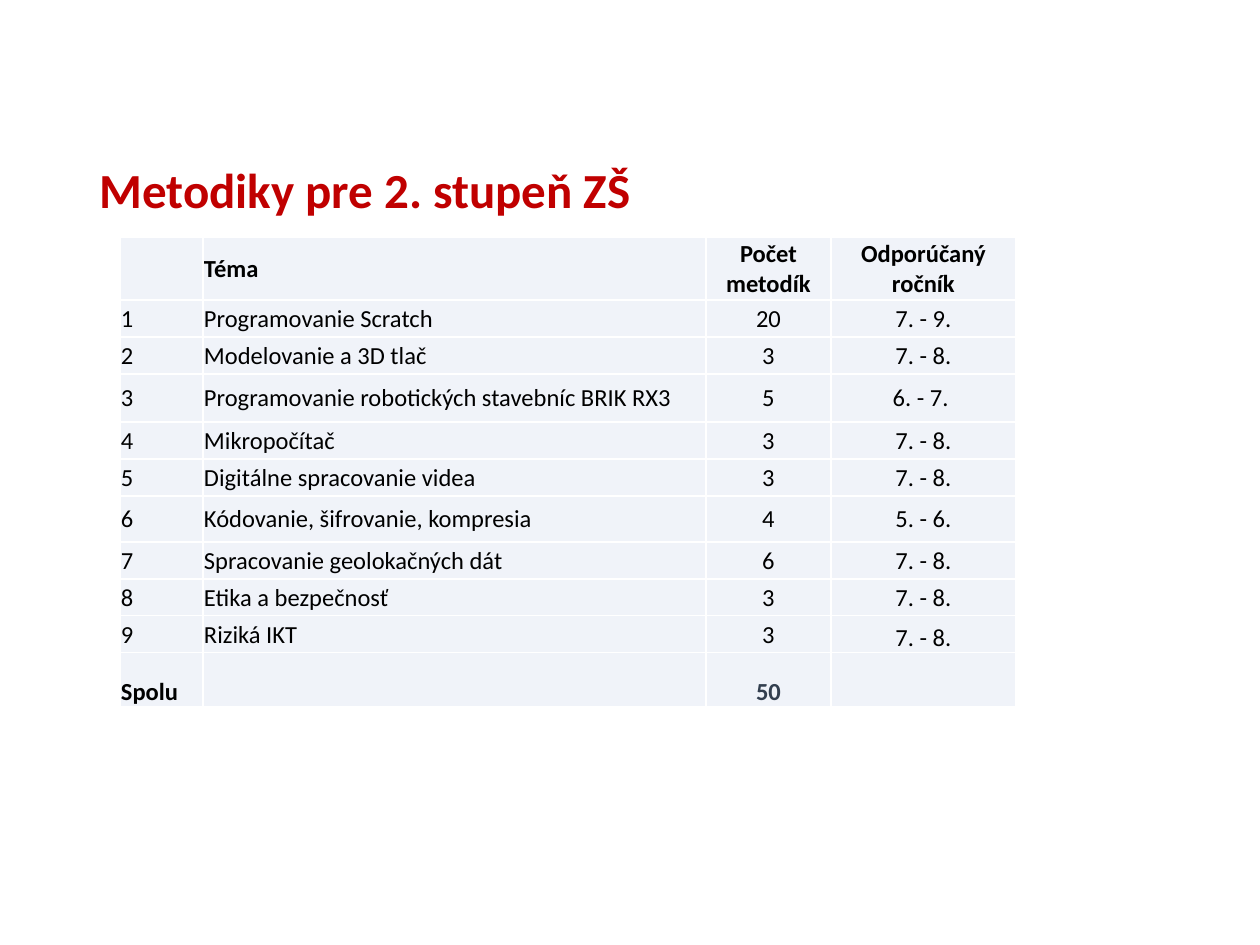
"""Build the slide listing teaching methodologies for lower secondary school."""
import dataclasses

import lxml.etree
import pptx
import pptx.dml.color
import pptx.enum.text
import pptx.oxml.ns
import pptx.util

PX_PER_INCH = 126
FONT = "Calibri"
COLORS = {"title": "C00000", "text": "000000", "total": "333F4F",
          "cell": "EAEFF7", "border": "FFFFFF"}
CELL_OPACITY = 70
ANCHOR = pptx.enum.text.MSO_ANCHOR
ALIGN = pptx.enum.text.PP_ALIGN
COLUMN_WIDTHS = (83, 503, 125, 185)
COLUMN_ALIGNS = (ALIGN.LEFT, ALIGN.LEFT, ALIGN.CENTER, ALIGN.CENTER)
HEADER_HEIGHT, TOPIC_HEIGHT, TOTAL_HEIGHT = 63, 37, 54


@dataclasses.dataclass(frozen=True)
class Topic:
    name: str
    count: str
    grades: str
    height: int = TOPIC_HEIGHT


@dataclasses.dataclass(frozen=True)
class Entry:
    text: str
    bold: bool = False
    color: str = "text"
    anchor: ANCHOR = ANCHOR.MIDDLE


TOPICS = (
    Topic("Programovanie Scratch", "20", "7. - 9."),
    Topic("Modelovanie a 3D tlač", "3", "7. - 8."),
    Topic("Programovanie robotických stavebníc BRIK RX3", "5", "6. - 7. ", 48),
    Topic("Mikropočítač", "3", "7. - 8."),
    Topic("Digitálne spracovanie videa", "3", "7. - 8."),
    Topic("Kódovanie, šifrovanie, kompresia", "4", "5. - 6.", 46),
    Topic("Spracovanie geolokačných dát", "6", "7. - 8."),
    Topic("Etika a bezpečnosť", "3", "7. - 8."),
    Topic("Riziká IKT", "3", "7. - 8."),
)


def px(length: int) -> pptx.util.Emu:
    return pptx.util.Emu(round(length * 914400 / PX_PER_INCH))


def rgb(name: str) -> pptx.dml.color.RGBColor:
    return pptx.dml.color.RGBColor.from_string(COLORS[name])


def add_span(para, text: str, size: int, color: str, bold: bool) -> None:
    span = para.add_run()
    span.text = text
    span.font.name = FONT
    span.font.size = pptx.util.Pt(size)
    span.font.bold = bold
    span.font.color.rgb = rgb(color)


def add_element(parent, tag: str, **attributes: str):
    return lxml.etree.SubElement(parent, pptx.oxml.ns.qn(tag), attributes)


def style_cell(cell) -> None:
    properties = cell._tc.get_or_add_tcPr()
    for side in ("a:lnL", "a:lnR", "a:lnT", "a:lnB"):
        line = add_element(properties, side, w=str(pptx.util.Pt(1)))
        add_element(add_element(line, "a:solidFill"), "a:srgbClr", val=COLORS["border"])
    cell.fill.solid()
    cell.fill.fore_color.rgb = rgb("cell")
    color = properties.find(pptx.oxml.ns.qn("a:solidFill"))[0]
    add_element(color, "a:alpha", val=str(CELL_OPACITY * 1000))


def fill_cell(cell, entry: Entry, align: ALIGN) -> None:
    cell.margin_left = cell.margin_right = cell.margin_top = px(1)
    cell.margin_bottom = 0
    cell.vertical_anchor = entry.anchor
    style_cell(cell)
    para = cell.text_frame.paragraphs[0]
    para.alignment = align
    if entry.text:
        add_span(para, entry.text, 14, entry.color, entry.bold)


def table_rows() -> list[tuple[int, list[Entry]]]:
    titles = ("", "Téma", "Počet metodík", "Odporúčaný ročník")
    rows = [(HEADER_HEIGHT, [Entry(title, bold=True) for title in titles])]
    for number, topic in enumerate(TOPICS, 1):
        anchor = ANCHOR.BOTTOM if number == len(TOPICS) else ANCHOR.MIDDLE
        rows.append((topic.height, [Entry(str(number)), Entry(topic.name), Entry(topic.count),
                                    Entry(topic.grades, anchor=anchor)]))
    rows.append((TOTAL_HEIGHT, [Entry("Spolu", True, anchor=ANCHOR.BOTTOM), Entry(""),
                                Entry("50", True, "total", ANCHOR.BOTTOM), Entry("")]))
    return rows


def add_title(page) -> None:
    box = page.shapes.title
    box.left, box.top, box.width, box.height = px(87), px(160), px(1086), px(183)
    box.text_frame.vertical_anchor = ANCHOR.TOP
    para = box.text_frame.paragraphs[0]
    para.alignment = ALIGN.LEFT
    para.line_spacing = 0.9
    add_span(para, "Metodiky pre 2. stupeň ZŠ", 28, "title", True)


def add_topic_table(page) -> None:
    rows = table_rows()
    table = page.shapes.add_table(
        len(rows), len(COLUMN_WIDTHS), px(120), px(237),
        px(sum(COLUMN_WIDTHS)), px(sum(height for height, _ in rows))).table
    table.first_row = table.horz_banding = False
    for column, width in zip(table.columns, COLUMN_WIDTHS):
        column.width = px(width)
    for row, (height, entries) in zip(table.rows, rows):
        row.height = px(height)
        for cell, entry, align in zip(row.cells, entries, COLUMN_ALIGNS):
            fill_cell(cell, entry, align)


def main() -> None:
    deck = pptx.Presentation()
    deck.slide_width, deck.slide_height = px(1260), px(945)
    page = deck.slides.add_slide(deck.slide_layouts[5])
    add_title(page)
    add_topic_table(page)
    deck.save("out.pptx")


if __name__ == "__main__":
    main()
